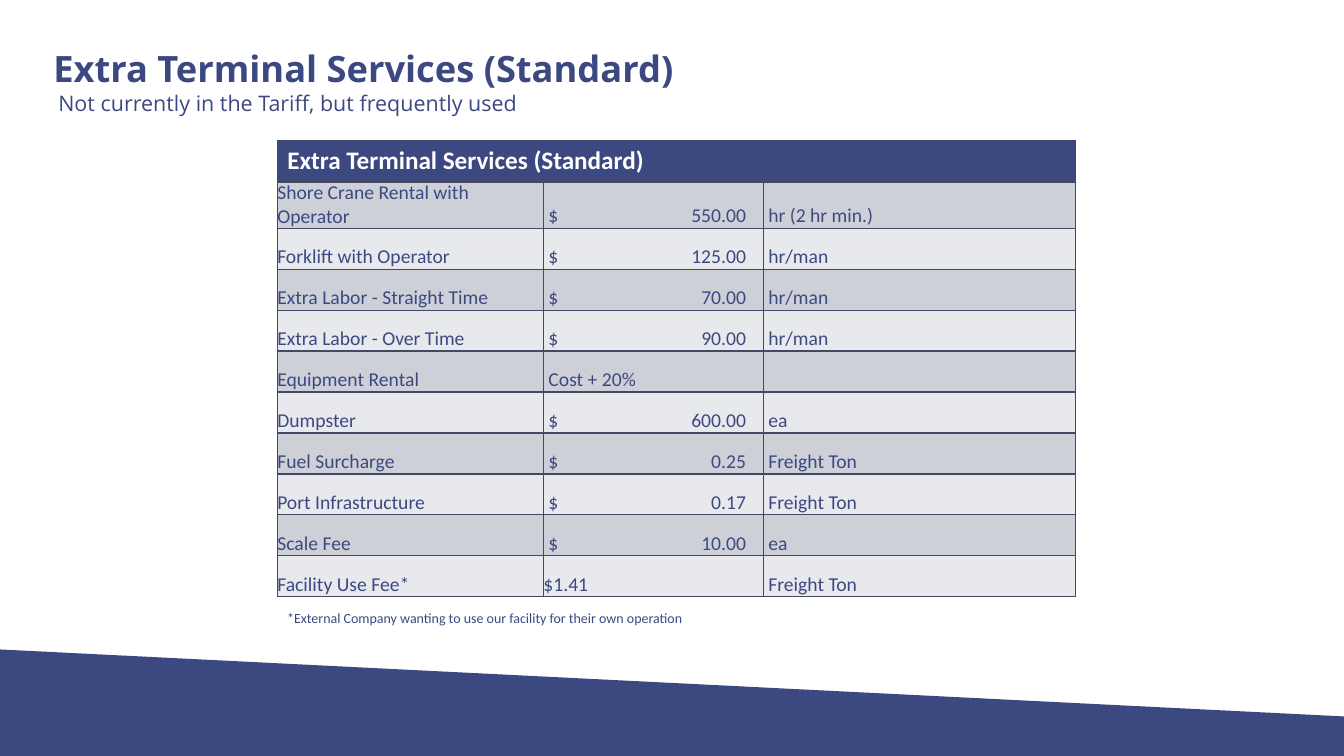
from dataclasses import dataclass

from lxml.etree import SubElement
from pptx import Presentation
from pptx.dml.color import RGBColor
from pptx.enum.text import MSO_ANCHOR
from pptx.oxml.ns import qn
from pptx.util import Pt

EMU_PER_PX = 9144
NAVY, WHITE, BORDER = "3C4981", "FFFFFF", "434867"
BANDS = ("CED0D8", "E8E9ED")
COLUMN_WIDTHS = (264, 218, 310)
TABLE_LEFT, TABLE_TOP, TABLE_HEIGHT = 275, 139, 447
CELL_INDENT = 5
PRICE_TAB = 196
BAND_CORNERS = ((-5, 754), (1336, 754), (1337, 711), (-6, 644))


@dataclass
class TextLine:
    text: str
    box: tuple[int, int, int, int]
    font: dict
    spacing: dict


@dataclass
class Service:
    name: str
    price: str
    unit: str
    price_indent: int = CELL_INDENT


TEXT_LINES = [
    TextLine("Extra Terminal Services (Standard)", (43, 49, 1245, 47),
             {"name": "Open Sans", "size": Pt(25.9), "bold": True}, {"line_spacing": 0.8}),
    TextLine("Not currently in the Tariff, but frequently used", (48, 91, 1245, 30),
             {"name": "Open Sans", "size": Pt(15.3)}, {"line_spacing": 0.7}),
    TextLine("*External Company wanting to use our facility for their own operation",
             (275, 600, 754, 27), {"name": "Calibri", "size": Pt(10)}, {}),
]
HEADING = "Extra Terminal Services (Standard)"
HEADING_FONT = {"name": "Calibri", "size": Pt(18), "bold": True}
BODY_FONT = {"name": "Calibri", "size": Pt(14), "bold": False}
SERVICES = [
    Service("Shore Crane Rental with Operator", "$\t550.00", "hr (2 hr min.)"),
    Service("Forklift with Operator", "$\t125.00", "hr/man"),
    Service("Extra Labor - Straight Time", "$\t70.00", "hr/man"),
    Service("Extra Labor - Over Time", "$\t90.00", "hr/man"),
    Service("Equipment Rental", "Cost + 20%", ""),
    Service("Dumpster", "$\t600.00", "ea"),
    Service("Fuel Surcharge", "$\t0.25", "Freight Ton"),
    Service("Port Infrastructure", "$\t0.17", "Freight Ton"),
    Service("Scale Fee", "$\t10.00", "ea"),
    Service("Facility Use Fee*", "$1.41", "Freight Ton", 0),
]


def emu(px: int) -> int:
    return px * EMU_PER_PX


def color(value: str) -> RGBColor:
    return RGBColor.from_string(value)


def apply_format(target, values: dict) -> None:
    for name, value in values.items():
        setattr(target, name, value)


def write(paragraph, text: str, font: dict, font_color: str) -> None:
    run = paragraph.add_run()
    run.text = text
    apply_format(run.font, font)
    run.font.color.rgb = color(font_color)


def add_text_line(slide, line: TextLine) -> None:
    text_frame = slide.shapes.add_textbox(*map(emu, line.box)).text_frame
    text_frame.word_wrap = True
    paragraph = text_frame.paragraphs[0]
    apply_format(paragraph, line.spacing)
    write(paragraph, line.text, line.font, font_color=NAVY)


def add_band(slide) -> None:
    start, *corners = [(emu(x), emu(y)) for x, y in BAND_CORNERS]
    builder = slide.shapes.build_freeform(*start)
    builder.add_line_segments(corners, close=True)
    band = builder.convert_to_shape()
    band.shadow.inherit = False
    band.fill.solid()
    band.fill.fore_color.rgb = color(NAVY)
    band.line.fill.background()


def style_cell(cell, fill: str, bottom_points: int = 1) -> None:
    properties = cell._tc.get_or_add_tcPr()
    for side, points in {"L": 1, "R": 1, "T": 1, "B": bottom_points}.items():
        line = SubElement(properties, qn(f"a:ln{side}"), w=str(Pt(points)))
        solid = SubElement(line, qn("a:solidFill"))
        SubElement(solid, qn("a:srgbClr"), val=BORDER)
    cell.fill.solid()
    cell.fill.fore_color.rgb = color(fill)


def fill_service_cell(cell, text: str, indent: int, fill: str) -> None:
    style_cell(cell, fill)
    apply_format(cell, {"margin_left": emu(indent), "margin_right": 0, "margin_top": 0,
                        "margin_bottom": 0, "vertical_anchor": MSO_ANCHOR.BOTTOM})
    paragraph = cell.text_frame.paragraphs[0]
    if "\t" in text:
        tabs = SubElement(paragraph._p.get_or_add_pPr(), qn("a:tabLst"))
        SubElement(tabs, qn("a:tab"), pos=str(emu(PRICE_TAB)), algn="r")
    if text:
        write(paragraph, text, BODY_FONT, NAVY)
    else:
        apply_format(paragraph.font, BODY_FONT)


def add_services_table(slide) -> None:
    frame = slide.shapes.add_table(
        len(SERVICES) + 1, len(COLUMN_WIDTHS), emu(TABLE_LEFT), emu(TABLE_TOP),
        emu(sum(COLUMN_WIDTHS)), emu(TABLE_HEIGHT))
    table = frame.table
    for column, width in zip(table.columns, COLUMN_WIDTHS):
        column.width = emu(width)
    for cell in table.rows[0].cells:
        style_cell(cell, NAVY, bottom_points=3)
    heading = table.cell(0, 0)
    heading.merge(table.cell(0, len(COLUMN_WIDTHS) - 1))
    write(heading.text_frame.paragraphs[0], HEADING, HEADING_FONT, WHITE)
    for index, service in enumerate(SERVICES):
        texts = (service.name, service.price, service.unit)
        indents = (0, service.price_indent, CELL_INDENT)
        for column, (text, indent) in enumerate(zip(texts, indents)):
            fill_service_cell(table.cell(index + 1, column), text, indent, BANDS[index % 2])


def main() -> None:
    presentation = Presentation()
    presentation.slide_width, presentation.slide_height = emu(1333), emu(750)
    slide = presentation.slides.add_slide(presentation.slide_layouts[6])
    add_band(slide)
    for line in TEXT_LINES:
        add_text_line(slide, line)
    add_services_table(slide)
    presentation.save("out.pptx")


if __name__ == "__main__":
    main()
